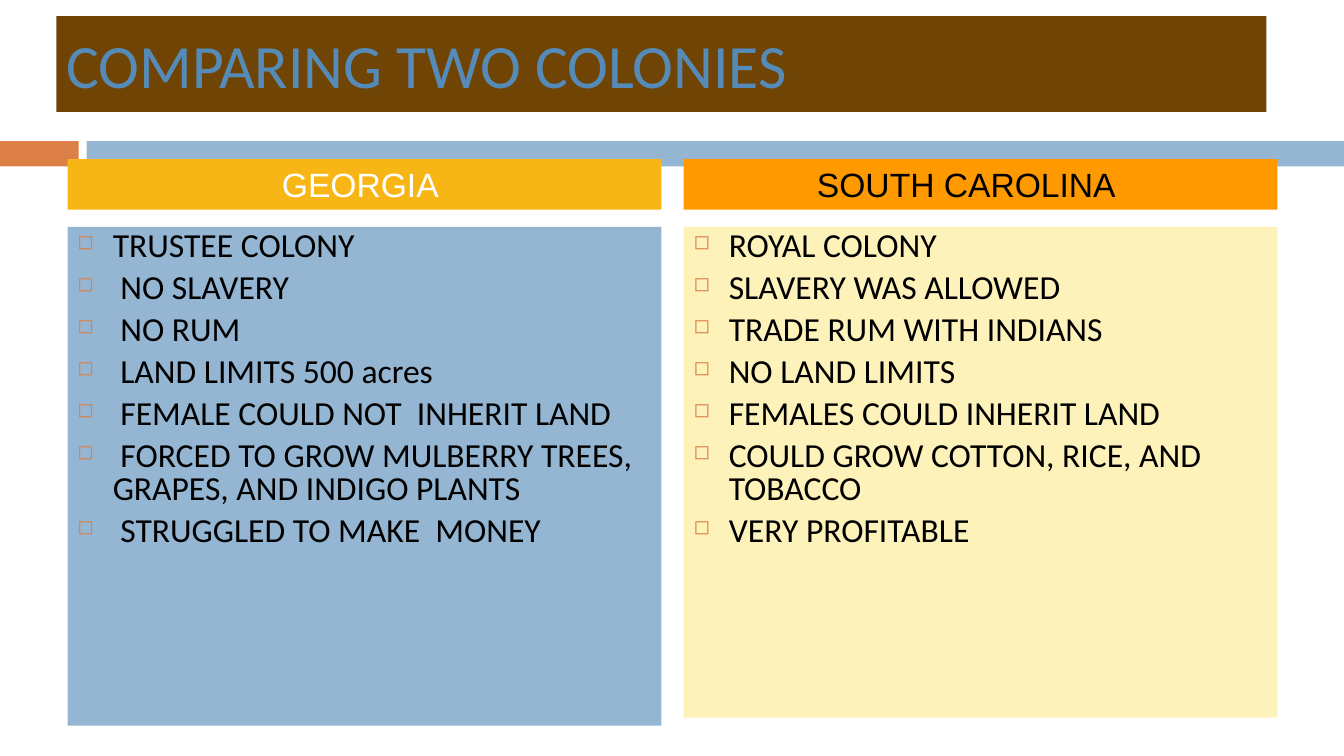
from lxml.etree import SubElement
from pptx import Presentation
from pptx.dml.color import RGBColor
from pptx.enum.shapes import MSO_SHAPE
from pptx.enum.text import MSO_ANCHOR, PP_ALIGN
from pptx.oxml.ns import qn
from pptx.util import Inches, Pt

BLACK = RGBColor(0x00, 0x00, 0x00)
WHITE = RGBColor(0xFF, 0xFF, 0xFF)
BROWN = RGBColor(0x70, 0x44, 0x04)
TITLE_BLUE = RGBColor(0x55, 0x8B, 0xB8)
BLUE = RGBColor(0x94, 0xB6, 0xD2)
RUST = RGBColor(0xDD, 0x80, 0x47)
GOLD = RGBColor(0xF7, 0xB6, 0x15)
ORANGE = RGBColor(0xFF, 0x99, 0x00)
CREAM = RGBColor(0xFD, 0xF2, 0xB9)

COLUMN_LEFT, COLUMN_STEP, COLUMN_WIDTH = 0.67, 6.11, 5.89
COLONIES = [
    {
        "name": "GEORGIA", "fill": GOLD, "color": WHITE, "right_inset": 0.18,
        "list_fill": BLUE, "list_height": 4.95,
        "facts": [
            "TRUSTEE COLONY",
            " NO SLAVERY",
            " NO RUM",
            " LAND LIMITS 500 acres",
            " FEMALE COULD NOT  INHERIT LAND",
            " FORCED TO GROW MULBERRY TREES, GRAPES, AND INDIGO PLANTS",
            " STRUGGLED TO MAKE  MONEY",
        ],
    },
    {
        "name": "SOUTH CAROLINA", "fill": ORANGE, "color": BLACK, "right_inset": 0.38,
        "list_fill": CREAM, "list_height": 4.87,
        "facts": [
            "ROYAL COLONY",
            "SLAVERY WAS ALLOWED",
            "TRADE RUM WITH INDIANS",
            "NO LAND LIMITS",
            "FEMALES COULD INHERIT LAND",
            "COULD GROW COTTON, RICE, AND TOBACCO",
            "VERY PROFITABLE",
        ],
    },
]


def set_attrs(obj, values):
    """Set each attribute named in values."""
    for name, value in values.items():
        setattr(obj, name, value)


def add_box(s, left, top, width, height, fill):
    """Add a plain filled rectangle."""
    sp = s.shapes.add_shape(MSO_SHAPE.RECTANGLE, Inches(left), Inches(top),
                            Inches(width), Inches(height))
    sp.shadow.inherit = False
    sp.fill.solid()
    sp.fill.fore_color.rgb = fill
    sp.line.fill.background()
    return sp


def style_font(p, name, size, color):
    """Set the font of a paragraph's runs."""
    for r in p.runs:
        set_attrs(r.font, {"name": name, "size": Pt(size)})
        r.font.color.rgb = color


def add_label(sp, text, font, anchor, align, right_inset=0.1):
    """Put one line of text in a box."""
    tf = sp.text_frame
    set_attrs(tf, {"word_wrap": True, "vertical_anchor": anchor,
                   "margin_right": Inches(right_inset)})
    p = tf.paragraphs[0]
    set_attrs(p, {"text": text, "alignment": align})
    style_font(p, *font)


def add_bullet(p):
    """Give a paragraph a hanging square bullet."""
    pPr = p._p.get_or_add_pPr()
    pPr.set("marL", str(Inches(0.35)))
    pPr.set("indent", str(-Inches(0.35)))
    color = SubElement(pPr, qn("a:buClr"))
    SubElement(color, qn("a:srgbClr"), val=str(RUST))
    SubElement(pPr, qn("a:buSzPct"), val="60000")
    SubElement(pPr, qn("a:buChar"), char="◻")


def add_facts(sp, facts):
    """Fill a box with a bulleted list."""
    tf = sp.text_frame
    set_attrs(tf, {"word_wrap": True, "vertical_anchor": MSO_ANCHOR.TOP})
    for i, fact in enumerate(facts):
        p = tf.add_paragraph() if i else tf.paragraphs[0]
        add_bullet(p)
        set_attrs(p, {"text": fact, "alignment": PP_ALIGN.LEFT, "line_spacing": 0.8,
                      "space_before": Pt(7 if i else 0)})
        style_font(p, "Calibri", 24, BLACK)


def add_colony(s, left, colony):
    """Add a colony's heading and its list."""
    facts = add_box(s, left, 2.25, COLUMN_WIDTH, colony["list_height"], colony["list_fill"])
    add_facts(facts, colony["facts"])
    heading = add_box(s, left, 1.58, COLUMN_WIDTH, 0.5, colony["fill"])
    add_label(heading, colony["name"], ("Arial", 24, colony["color"]),
              MSO_ANCHOR.TOP, PP_ALIGN.CENTER, colony["right_inset"])


def main():
    """Build and save the slide."""
    prs = Presentation()
    set_attrs(prs, {"slide_width": Inches(13.33), "slide_height": Inches(7.5)})
    s = prs.slides.add_slide(prs.slide_layouts[6])
    add_box(s, 0, 1.4, 0.78, 0.25, RUST)
    add_box(s, 0.86, 1.4, 12.47, 0.25, BLUE)
    title = add_box(s, 0.56, 0.16, 12, 0.95, BROWN)
    add_label(title, "COMPARING TWO COLONIES", ("Calibri", 44, TITLE_BLUE),
              MSO_ANCHOR.MIDDLE, PP_ALIGN.LEFT)
    for i, colony in enumerate(COLONIES):
        add_colony(s, COLUMN_LEFT + i * COLUMN_STEP, colony)
    prs.save("out.pptx")


if __name__ == "__main__":
    main()
